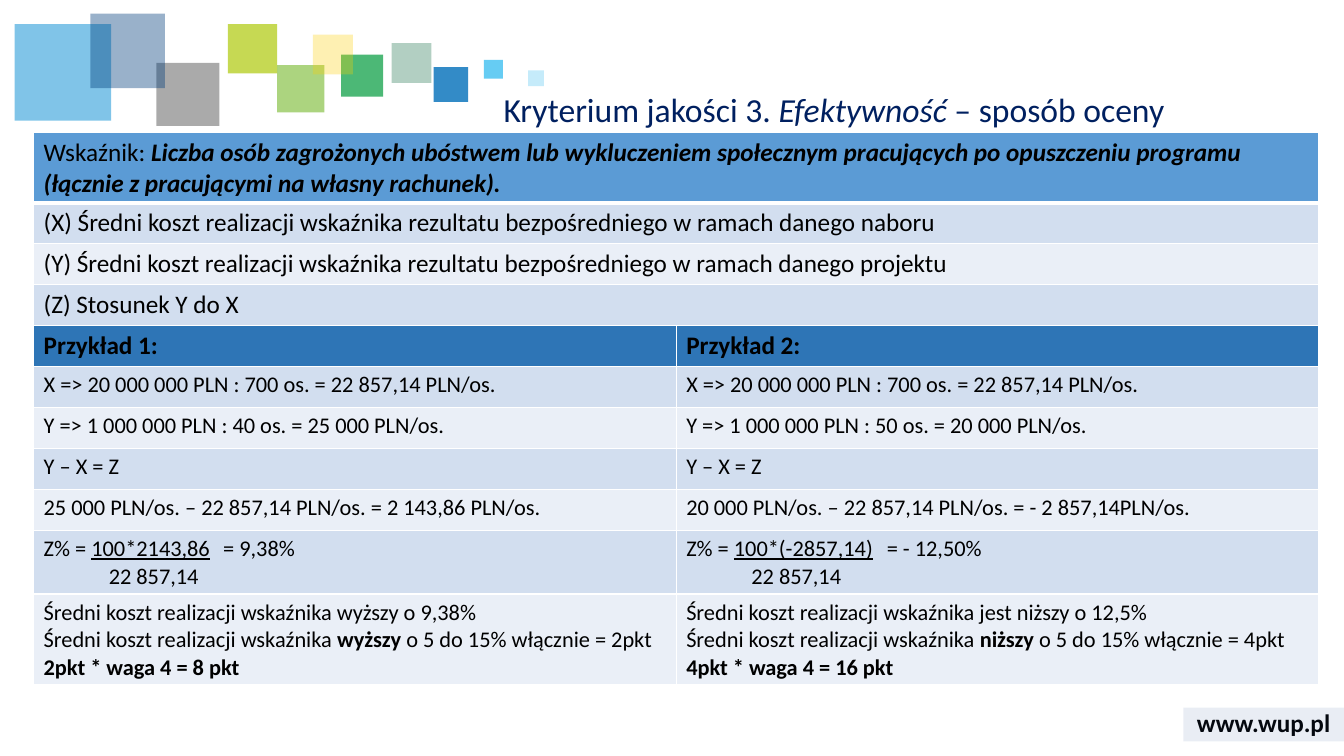
from dataclasses import dataclass

from lxml.etree import SubElement
from pptx import Presentation
from pptx.dml.color import RGBColor as Color
from pptx.enum.shapes import MSO_SHAPE as Shape
from pptx.enum.text import MSO_ANCHOR as Anchor, MSO_AUTO_SIZE as AutoSize, PP_ALIGN as Align
from pptx.oxml.ns import qn
from pptx.util import Pt

PX = 9525


@dataclass(frozen=True)
class Theme:
    """Colours and type sizes of the slide."""
    font: str = "Calibri"
    text: str = "000000"
    title: str = "002060"
    border: str = "FFFFFF"
    indicator: str = "5B9BD5"
    example: str = "2E75B6"
    bands: tuple = ("D2DEEF", "EAEFF7")
    footer: str = "2F5597"
    title_size: int = 24
    large: int = 18
    small: int = 16


@dataclass(frozen=True)
class Box:
    """A region of the slide in px."""
    left: int
    top: int
    width: int
    height: int

    def emu(self):
        """Return the four lengths in EMU."""
        return [length * PX for length in (self.left, self.top, self.width, self.height)]


THEME = Theme()
SQUARES = [
    (359, 28, 38, "006138", 30), (399, 51, 33, "006EB9", 80),
    (311, 39, 40, "009A3C", 70), (0, 10, 92, "028BD3", 50),
    (250, 49, 45, "75B82A", 60), (135, 47, 60, "575757", 50),
    (72, 0, 71, "003D7C", 40), (447, 44, 18, "40C0F1", 80),
    (203, 10, 47, "AFCA0B", 70), (284, 20, 38, "FED000", 30),
    (489, 54, 15, "40C0F1", 30),
]
INDICATOR = [[
    ("Wskaźnik: ", ""),
    ("Liczba osób zagrożonych ubóstwem lub wykluczeniem społecznym pracujących "
     "po opuszczeniu programu (łącznie z pracującymi na własny rachunek).", "bi"),
]]
DEFINITIONS = [
    "(X) Średni koszt realizacji wskaźnika rezultatu bezpośredniego w ramach danego naboru",
    "(Y) Średni koszt realizacji wskaźnika rezultatu bezpośredniego w ramach danego projektu",
    "(Z) Stosunek Y do X",
]
EXAMPLES = [
    dict(number=1, people=40, cost="25 000", difference="2 143,86 PLN/os.",
         numerator="100*2143,86", fraction_end=171, percent="9,38%",
         finding="wyższy o 9,38%", relation="wyższy", points=2, score=8),
    dict(number=2, people=50, cost="20 000", difference="- 2 857,14PLN/os.",
         numerator="100*(-2857,14)", fraction_end=191, percent="- 12,50%",
         finding="jest niższy o 12,5%", relation="niższy", points=4, score=16),
]


def plain(text, style=""):
    """Return cell content of one paragraph with one run."""
    return [[(text, style)]]


def example_cells(example):
    """Return the contents of one example column from top to bottom."""
    cost, points = example["cost"], example["points"]
    return [
        plain(f"Przykład {example['number']}:", "b"),
        plain("X => 20 000 000 PLN : 700 os. = 22 857,14 PLN/os."),
        plain(f"Y => 1 000 000 PLN : {example['people']} os. = {cost} PLN/os."),
        plain("Y – X = Z"),
        plain(f"{cost} PLN/os. – 22 857,14 PLN/os. = {example['difference']}"),
        [[("Z% = ", ""), (f"{example['numerator']}\t", "u"), (f"= {example['percent']}", "")],
         [("22 857,14", "")]],
        [[(f"Średni koszt realizacji wskaźnika {example['finding']}", "")],
         [("Średni koszt realizacji wskaźnika ", ""), (example["relation"], "b"),
          (f" o 5 do 15% włącznie = {points}pkt", "")],
         [(f"{points}pkt * waga 4 = {example['score']} pkt", "b")]],
    ]


def write(frame, paragraphs, size, color=THEME.text):
    """Fill a text frame with paragraphs of styled runs."""
    for index, runs in enumerate(paragraphs):
        paragraph = frame.add_paragraph() if index else frame.paragraphs[0]
        for text, style in runs:
            run = paragraph.add_run()
            run.text = text
            values = {"name": THEME.font, "size": Pt(size), "bold": "b" in style,
                      "italic": "i" in style, "underline": "u" in style}
            for name, value in values.items():
                setattr(run.font, name, value)
            run.font.color.rgb = Color.from_string(color)


def paint(shape, color, opacity):
    """Give a shape a translucent fill without line or shadow."""
    shape.shadow.inherit = False
    shape.line.fill.background()
    shape.fill.solid()
    shape.fill.fore_color.rgb = Color.from_string(color)
    color_node = shape.fill._xPr.find(qn("a:solidFill"))[0]
    SubElement(color_node, qn("a:alpha"), val=str(opacity * 1000))


def add_squares(slide, box):
    """Place the group of coloured squares."""
    group = slide.shapes.add_group_shape()
    for left, top, side, color, opacity in SQUARES:
        place = Box(box.left + left, box.top + top, side, side)
        paint(group.shapes.add_shape(Shape.RECTANGLE, *place.emu()), color, opacity)


def add_footer(slide, box):
    """Place the web address and its translucent bar."""
    text_box = slide.shapes.add_textbox(*box.emu())
    frame = text_box.text_frame
    frame.word_wrap = True
    frame.vertical_anchor = Anchor.MIDDLE
    write(frame, plain("www.wup.pl", "b"), THEME.large)
    frame.paragraphs[0].alignment = Align.CENTER
    bar = Box(box.left, box.top + 5, box.width, box.height - 6)
    paint(slide.shapes.add_shape(Shape.RECTANGLE, *bar.emu()), THEME.footer, 10)


def add_title(slide, box):
    """Place the title."""
    title = slide.shapes.title
    for name, value in zip(("left", "top", "width", "height"), box.emu()):
        setattr(title, name, value)
    frame = title.text_frame
    for name, value in {"word_wrap": True, "auto_size": AutoSize.NONE,
                        "vertical_anchor": Anchor.TOP}.items():
        setattr(frame, name, value)
    runs = [("Kryterium jakości 3. ", ""), ("Efektywność", "i"), (" – sposób oceny", "")]
    write(frame, [runs], THEME.title_size, THEME.title)
    frame.paragraphs[0].alignment = Align.LEFT
    frame.paragraphs[0].line_spacing = 0.9


def format_cell(cell, fill, row):
    """Draw the borders of a cell and fill it."""
    widths = {"lnL": 1, "lnR": 1, "lnT": 3 if row == 1 else 1, "lnB": 3 if row == 0 else 1}
    properties = cell._tc.get_or_add_tcPr()
    for edge, width in widths.items():
        line = SubElement(properties, qn(f"a:{edge}"), w=str(Pt(width)))
        SubElement(SubElement(line, qn("a:solidFill")), qn("a:srgbClr"), val=THEME.border)
    cell.fill.solid()
    cell.fill.fore_color.rgb = Color.from_string(fill)


def align_fraction(frame, fraction_end):
    """Extend the fraction line by a tab and indent the denominator."""
    numerator, denominator = (paragraph._p.get_or_add_pPr() for paragraph in frame.paragraphs)
    tabs = SubElement(numerator, qn("a:tabLst"))
    SubElement(tabs, qn("a:tab"), pos=str(fraction_end * PX), algn="l")
    denominator.set("marL", str(62 * PX))


def add_assessment(slide, box):
    """Place the table of definitions and the two examples."""
    wide_rows = [[INDICATOR]] + [[plain(text)] for text in DEFINITIONS]
    rows = wide_rows + list(zip(*map(example_cells, EXAMPLES)))
    heading = len(wide_rows)
    table = slide.shapes.add_table(len(rows), len(EXAMPLES), *box.emu()).table
    for index, contents in enumerate(rows):
        table.rows[index].height = box.height // len(rows) * PX
        band = THEME.bands[(index + 1) % 2]
        fill = {0: THEME.indicator, heading: THEME.example}.get(index, band)
        for column in range(len(EXAMPLES)):
            format_cell(table.cell(index, column), fill, index)
        if len(contents) == 1:
            table.cell(index, 0).merge(table.cell(index, len(EXAMPLES) - 1))
        size = THEME.large if index <= heading else THEME.small
        for column, paragraphs in enumerate(contents):
            write(table.cell(index, column).text_frame, paragraphs, size)
    for column, example in enumerate(EXAMPLES):
        align_fraction(table.cell(len(rows) - 2, column).text_frame, example["fraction_end"])


def main():
    """Build and save the presentation."""
    presentation = Presentation()
    presentation.slide_width, presentation.slide_height = 1280 * PX, 720 * PX
    slide = presentation.slides.add_slide(presentation.slide_layouts[5])
    add_footer(slide, Box(1127, 669, 153, 38))
    add_squares(slide, Box(14, 13, 504, 109))
    add_title(slide, Box(470, 84, 660, 53))
    add_assessment(slide, Box(32, 126, 1224, 429))
    presentation.save("out.pptx")


if __name__ == "__main__":
    main()
